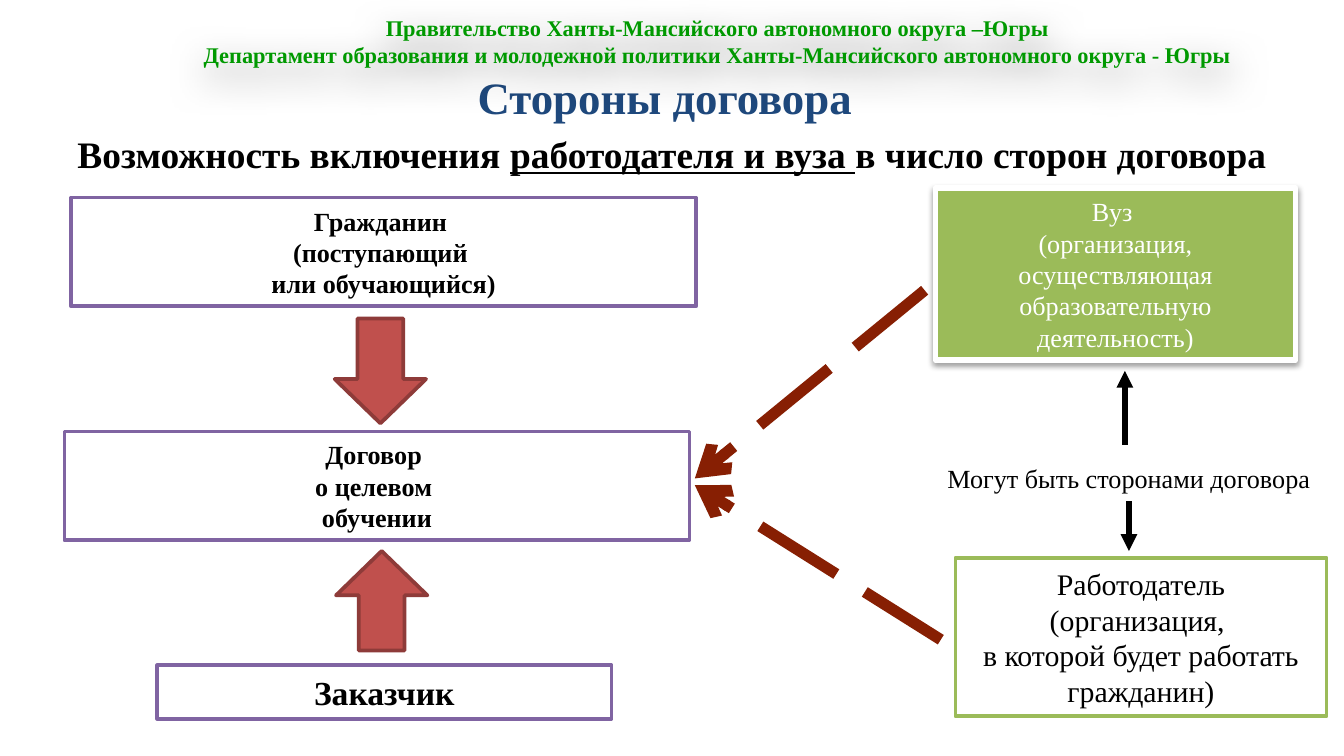
from pptx import Presentation
from pptx import util as u
from pptx.dml.color import RGBColor
from pptx.enum import dml, shapes, text
from pptx.oxml import parse_xml
from pptx.oxml.ns import nsdecls

PX = 9144
FONT = "Times New Roman"
BLACK, WHITE = "000000", "FFFFFF"
PURPLE, GREEN, RED, BROWN = "8064A2", "9BBB59", "C0504D", "871F03"


def px(*lengths):
    return [u.Emu(n * PX) for n in lengths]


def rgb(color):
    return RGBColor.from_string(color)


def write(sp, lines, size, color=BLACK, bold=False, anchor=text.MSO_ANCHOR.TOP):
    tf = sp.text_frame
    tf.word_wrap = True
    tf.auto_size = text.MSO_AUTO_SIZE.NONE
    tf.vertical_anchor = anchor
    for i, line in enumerate(lines):
        p = tf.add_paragraph() if i else tf.paragraphs[0]
        p.alignment = text.PP_ALIGN.CENTER
        p.font.name, p.font.size = FONT, u.Pt(size)
        p.font.bold, p.font.color.rgb = bold, rgb(color)
        for j, part in enumerate(line.split("|")):
            r = p.add_run()
            r.text = part
            if j % 2:
                r.font.underline = True


def label(s, x, y, w, h, lines, size, **style):
    sp = s.shapes.add_textbox(*px(x, y, w, h))
    write(sp, lines, size, **style)
    return sp


def block(s, x, y, w, h, fill, line, weight=2, kind=shapes.MSO_SHAPE.RECTANGLE):
    sp = s.shapes.add_shape(kind, *px(x, y, w, h))
    sp.shadow.inherit = False
    sp.fill.solid()
    sp.fill.fore_color.rgb = rgb(fill)
    sp.line.color.rgb = rgb(line)
    sp.line.width = u.Pt(weight)
    return sp


def card(s, x, y, w, h, lines, size, line, fill=WHITE, weight=2, **style):
    sp = block(s, x, y, w, h, fill, line, weight)
    write(sp, lines, size, anchor=text.MSO_ANCHOR.MIDDLE, **style)
    return sp


def cast_shadow(sp, blur, distance, opacity):
    sp.shadow.inherit = False
    effects = sp._element.spPr.find("{*}effectLst")
    effects.append(parse_xml(
        f'<a:outerShdw {nsdecls("a")} blurRad="{u.Pt(blur)}" dist="{u.Pt(distance)}" '
        f'dir="5400000" rotWithShape="0"><a:srgbClr val="{BLACK}">'
        f'<a:alpha val="{opacity * 1000}"/></a:srgbClr></a:outerShdw>'))


def block_arrow(s, x, y, w, h, rotation):
    sp = block(s, x, y, w, h, RED, "8E3B39", kind=shapes.MSO_SHAPE.RIGHT_ARROW)
    sp.rotation = rotation
    sp.adjustments[1] = 0.485


def link(s, x1, y1, x2, y2, color, weight, head, dash=None):
    c = s.shapes.add_connector(shapes.MSO_CONNECTOR.STRAIGHT, *px(x1, y1, x2, y2))
    c.line.color.rgb = rgb(color)
    c.line.width = u.Pt(weight)
    if dash:
        c.line.dash_style = dash
    c.line._get_or_add_ln().append(parse_xml(f'<a:tailEnd {nsdecls("a")} type="{head}"/>'))
    c._element.spPr.append(parse_xml(f'<a:effectLst {nsdecls("a")}/>'))


def header(s, x, y, w):
    sp = label(s, x + 111, y + 6, 846, 50, [
        "Правительство Ханты-Мансийского автономного округа –Югры",
        "Департамент образования и молодежной политики "
        "Ханты-Мансийского автономного округа - Югры"], 12, color="009900", bold=True)
    cast_shadow(sp, 20, 6, 50)
    title = s.shapes.title
    title.left, title.top, title.width, title.height = px(x + 30, y + 47, 929, 47)
    write(title, ["Стороны договора"], 24, color="1F497D", bold=True)
    label(s, x, y + 93, w, 44, [
        "Возможность включения |работодателя и вуза |в число сторон договора"], 20, bold=True)


def contract_column(s, x, y):
    card(s, x + 5, y, 465, 81, ["Гражданин ", "(поступающий ", "или обучающийся)"],
         14, PURPLE, bold=True)
    block_arrow(s, x + 196, y + 95, 78, 68, 90)
    card(s, x, y + 174, 465, 81, ["Договор ", "о целевом ", "обучении"],
         14, PURPLE, bold=True)
    block_arrow(s, x + 199, y + 266, 74, 68, 270)
    card(s, x + 69, y + 348, 338, 40, ["Заказчик"], 18, PURPLE, bold=True)


def parties_column(s, x, y):
    university = card(s, x + 5, y, 268, 128, [
        "Вуз ", "(организация, осуществляющая образовательную деятельность)"],
        14, WHITE, GREEN, 3, color=WHITE)
    cast_shadow(university, 3.15, 1.57, 38)
    link(s, x + 146, y + 191, x + 146, y + 136, BLACK, 3, "triangle")
    label(s, x, y + 199, 298, 34, ["Могут быть сторонами договора"], 14)
    link(s, x + 149, y + 233, x + 149, y + 270, BLACK, 3, "triangle")
    card(s, x + 20, y + 275, 276, 118, [
        "Работодатель (организация, ", "в которой будет работать гражданин)"], 16, GREEN)


def optional_links(s, x, y):
    for x1, y1, y2 in ((183, 120, 5), (171, -140, 0)):
        link(s, x + x1, y + y1, x, y + y2, BROWN, 6, "arrow", dml.MSO_LINE.LONG_DASH)


def main():
    prs = Presentation()
    prs.slide_width, = px(1000)
    prs.slide_height = prs.slide_width * 9 // 16
    s = prs.slides.add_slide(prs.slide_layouts[5])
    header(s, 0, 0, 1000)
    contract_column(s, 48, 147)
    parties_column(s, 691, 140)
    optional_links(s, 517, 356)
    prs.save("out.pptx")


if __name__ == "__main__":
    main()
